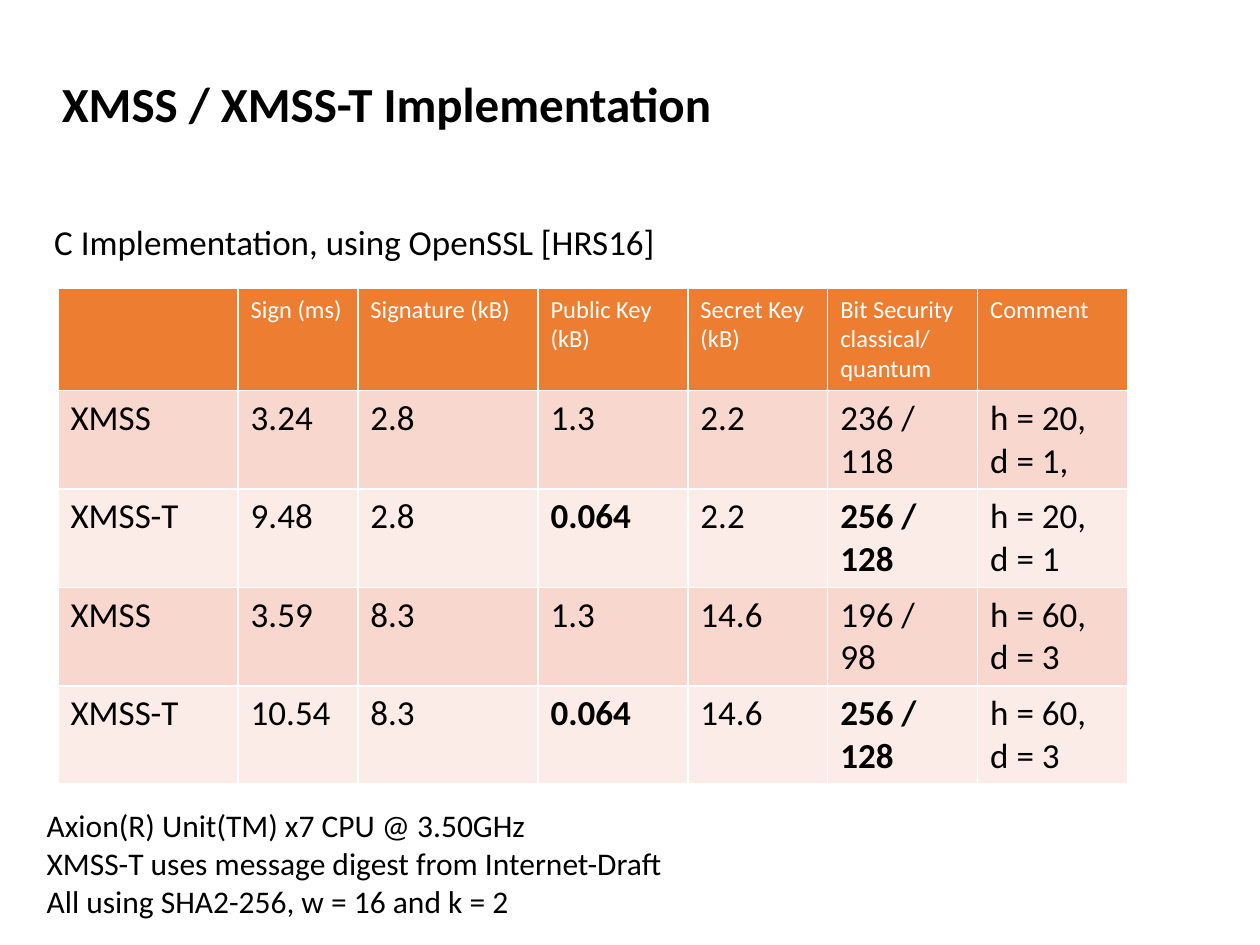
from dataclasses import dataclass

from lxml.etree import SubElement
from pptx import Presentation
from pptx.dml.color import RGBColor
from pptx.enum.text import MSO_ANCHOR, MSO_AUTO_SIZE, PP_ALIGN
from pptx.oxml.ns import qn
from pptx.shapes.autoshape import Shape
from pptx.slide import Slide
from pptx.text.text import TextFrame
from pptx.util import Inches, Pt

BLACK = RGBColor(0x00, 0x00, 0x00)
WHITE = RGBColor(0xFF, 0xFF, 0xFF)
ORANGE = RGBColor(0xED, 0x7D, 0x31)
BANDS = (RGBColor(0xF8, 0xD7, 0xCE), RGBColor(0xFC, 0xEC, 0xE8))

FRAME = {
    "word_wrap": True,
    "auto_size": MSO_AUTO_SIZE.NONE,
    "vertical_anchor": MSO_ANCHOR.TOP,
}
PARA = {"alignment": PP_ALIGN.LEFT, "space_before": Pt(0)}

WIDTHS = (1.43, 0.95, 1.43, 1.19, 1.11, 1.19, 1.19)
HEIGHTS = (0.79, 0.77, 0.77, 0.77, 0.77)
STRONG = (3, 5)  # columns in bold on the XMSS-T rows

# "\v" is a line break, "\n" a new paragraph
HEADS = ("", "Sign (ms)", "Signature (kB)", "Public Key (kB)", "Secret Key (kB)",
         "Bit Security\vclassical/\vquantum", "Comment")
ROWS = (
    ("XMSS", "3.24", "2.8", "1.3", "2.2", "236 /\v118", "h = 20,\nd = 1,"),
    ("XMSS-T", "9.48", "2.8", "0.064", "2.2", "256 /\n128", "h = 20,\nd = 1"),
    ("XMSS", "3.59", "8.3", "1.3", "14.6", "196 /\v98", "h = 60,\nd = 3"),
    ("XMSS-T", "10.54", "8.3", "0.064", "14.6", "256 /\n128", "h = 60,\nd = 3"),
)


@dataclass
class Block:
    text: str
    left: float
    top: float
    width: float
    height: float
    size: int
    bold: bool = False
    inset: float = 0.1


TITLE = Block("XMSS / XMSS-T Implementation", 0.39, 0.53, 7.29, 0.92, 28, bold=True)
LEAD = Block("C Implementation, using OpenSSL [HRS16]",
             0.27, 1.7, 9.45, 0.44, 20, inset=0.16)
NOTES = Block("Axion(R) Unit(TM) x7 CPU @ 3.50GHz\v"
              "XMSS-T uses message digest from Internet-Draft\v"
              "All using SHA2-256, w = 16 and k = 2",
              0.27, 6.35, 9.45, 1.01, 18)


def write(frame: TextFrame, text: str, size: int, color: RGBColor, bold: bool) -> None:
    frame.text = text
    style = {"name": "Calibri", "size": Pt(size), "bold": bold}
    for para in frame.paragraphs:
        for key, value in PARA.items():
            setattr(para, key, value)
        for run in para.runs:
            for key, value in style.items():
                setattr(run.font, key, value)
            run.font.color.rgb = color


def place(shape: Shape, block: Block) -> None:
    for key in ("left", "top", "width", "height"):
        setattr(shape, key, Inches(getattr(block, key)))
    frame = shape.text_frame
    for key, value in FRAME.items():
        setattr(frame, key, value)
    frame.margin_left = Inches(block.inset)
    write(frame, block.text, block.size, BLACK, block.bold)


def unlist(frame: TextFrame) -> None:
    """Take bullets and hanging indents off every paragraph."""
    for para in frame.paragraphs:
        props = para._p.get_or_add_pPr()
        props.set("marL", "0")
        props.set("indent", "0")
        SubElement(props, qn("a:buNone"))


def add_grid(slide: Slide) -> None:
    grid = slide.shapes.add_table(
        len(HEIGHTS), len(WIDTHS), Inches(0.46), Inches(2.29),
        Inches(sum(WIDTHS)), Inches(sum(HEIGHTS))).table
    for col, width in zip(grid.columns, WIDTHS):
        col.width = Inches(width)
    for row, height in zip(grid.rows, HEIGHTS):
        row.height = Inches(height)
    for r, texts in enumerate((HEADS, *ROWS)):
        head = r == 0
        for c, text in enumerate(texts):
            cell = grid.cell(r, c)
            cell.fill.solid()
            cell.fill.fore_color.rgb = ORANGE if head else BANDS[(r - 1) % 2]
            bold = texts[0] == "XMSS-T" and c in STRONG
            write(cell.text_frame, text, 14 if head else 20,
                  WHITE if head else BLACK, bold)


def main() -> None:
    deck = Presentation()
    deck.slide_width, deck.slide_height = Inches(10), Inches(7.5)
    slide = deck.slides.add_slide(deck.slide_layouts[1])
    place(slide.shapes.title, TITLE)
    place(slide.shapes.add_textbox(0, 0, 0, 0), LEAD)
    add_grid(slide)
    body = slide.placeholders[1]
    place(body, NOTES)
    unlist(body.text_frame)
    deck.save("out.pptx")


if __name__ == "__main__":
    main()
